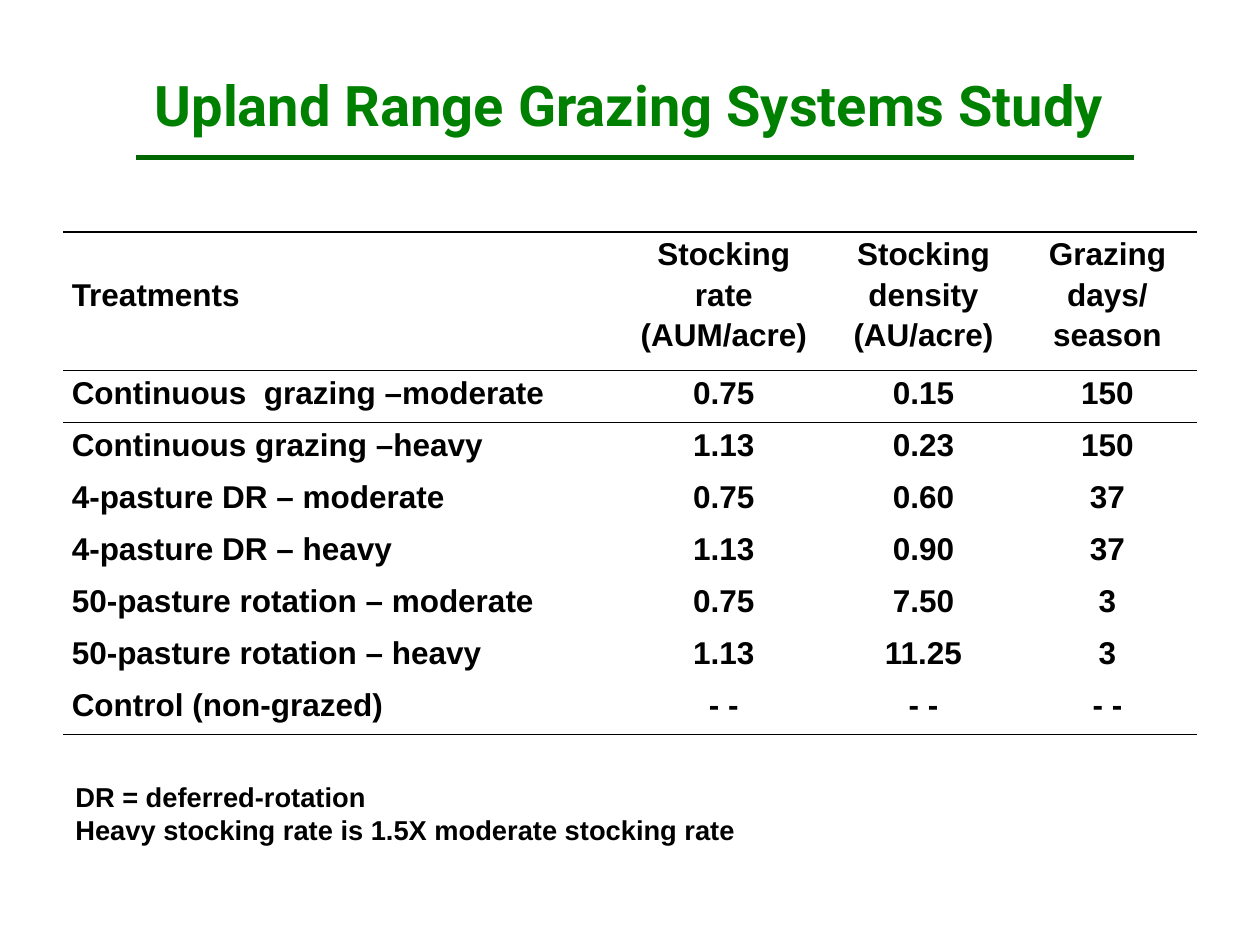
from lxml.etree import SubElement
from pptx import Presentation
from pptx.dml.color import RGBColor
from pptx.enum.shapes import MSO_CONNECTOR
from pptx.enum.text import MSO_ANCHOR, PP_ALIGN
from pptx.oxml.ns import qn
from pptx.util import Inches, Pt

BLACK = "000000"
NO_GRID_STYLE = "{2D5ABB26-0587-4C30-8999-92F81FD0307C}"
LINE_PITCH = 0.32  # height of one header line

COLUMN_WIDTHS = [4.41, 1.67, 1.5, 1.42]
SPACER_HEIGHT, HEADER_HEIGHT, BODY_HEIGHT = 0.3, 1.1, 2.89
ROWS = [
    ["Treatments", "Stocking rate (AUM/acre)", "Stocking density (AU/acre)",
     "Grazing days/ season"],
    ["Continuous  grazing –moderate", "0.75", "0.15", "150"],
    ["Continuous grazing –heavy", "1.13", "0.23", "150"],
    ["4-pasture DR – moderate", "0.75", "0.60", "37"],
    ["4-pasture DR – heavy", "1.13", "0.90", "37"],
    ["50-pasture rotation – moderate", "0.75", "7.50", "3"],
    ["50-pasture rotation – heavy", "1.13", "11.25", "3"],
    ["Control (non-grazed)", "- -", "- -", "- -"],
]


def color(value):
    return RGBColor.from_string(value)


def style_para(para, size, font_name, font_color, align=PP_ALIGN.LEFT):
    para.alignment = align
    font = para.font
    font.size, font.name, font.bold = Pt(size), font_name, True
    font.color.rgb = color(font_color)


def add_text(page, left, top, width, height, lines, size, font_name,
             font_color, align=PP_ALIGN.LEFT, anchor=MSO_ANCHOR.TOP):
    box = page.shapes.add_textbox(Inches(left), Inches(top),
                                  Inches(width), Inches(height))
    frame = box.text_frame
    frame.word_wrap = True
    frame.vertical_anchor = anchor
    frame.text = "\n".join(lines)
    for para in frame.paragraphs:
        style_para(para, size, font_name, font_color, align)


def add_rule(page, left, right, y, line_color, width):
    rule = page.shapes.add_connector(MSO_CONNECTOR.STRAIGHT, Inches(left),
                                     Inches(y), Inches(right), Inches(y))
    rule.line.color.rgb = color(line_color)
    rule.line.width = Pt(width)
    SubElement(rule._element.spPr, qn("a:effectLst"))


def add_border(cell, edge):
    properties = cell._tc.get_or_add_tcPr()
    line = SubElement(properties, qn(f"a:ln{edge}"), w=str(Pt(1)))
    fill = SubElement(line, qn("a:solidFill"))
    SubElement(fill, qn("a:srgbClr"), val=BLACK)


def fill_cell(cell, text, align, top_margin=0):
    cell.margin_left = cell.margin_right = Inches(0.07)
    cell.margin_top, cell.margin_bottom = Inches(top_margin), 0
    cell.text = text
    para = cell.text_frame.paragraphs[0]
    para.line_spacing = 1.15
    style_para(para, 18, "Arial", BLACK, align)


def add_treatment_table(page, left, top):
    body_count = len(ROWS) - 1
    heights = [SPACER_HEIGHT, HEADER_HEIGHT] + [BODY_HEIGHT / body_count] * body_count
    frame = page.shapes.add_table(
        len(heights), len(COLUMN_WIDTHS), Inches(left), Inches(top),
        Inches(sum(COLUMN_WIDTHS)), Inches(sum(heights)))
    table = frame.table
    table.first_row = table.horz_banding = False
    table._tbl.tblPr.find(qn("a:tableStyleId")).text = NO_GRID_STYLE
    for column, width in zip(table.columns, COLUMN_WIDTHS):
        column.width = Inches(width)
    for row, height in zip(table.rows, heights):
        row.height = Inches(height)

    # Empty spanning row above the header
    for cell in table.rows[0].cells:
        cell.margin_top = cell.margin_bottom = 0
        add_border(cell, "B")
        cell.fill.background()
    table.cell(0, 0).merge(table.cell(0, len(COLUMN_WIDTHS) - 1))

    # Header and treatments, ruled around the header and under the last row
    for r, texts in enumerate(ROWS):
        for c, text in enumerate(texts):
            cell = table.cell(r + 1, c)
            align = PP_ALIGN.CENTER if c else PP_ALIGN.LEFT
            fill_cell(cell, text, align, LINE_PITCH if r == c == 0 else 0)
            if r in (0, 1):
                add_border(cell, "T")
            if r in (0, body_count):
                add_border(cell, "B")
            cell.fill.background()


def main():
    deck = Presentation()
    deck.slide_width, deck.slide_height = Inches(10), Inches(7.5)
    page = deck.slides.add_slide(deck.slide_layouts[6])

    # Title and its underline
    add_text(page, 0.33, 0.51, 9.33, 0.64, ["Upland Range Grazing Systems Study"],
             32, "Roboto", "008000", PP_ALIGN.CENTER)
    add_rule(page, 1.08, 9, 1.25, "006600", 3)

    add_treatment_table(page, 0.5, 1.54)

    # Notes under the table
    add_text(page, 0.5, 6.08, 9, 0.75,
             ["DR = deferred-rotation",
              "Heavy stocking rate is 1.5X moderate stocking rate"],
             15.6, "Arial", BLACK, anchor=MSO_ANCHOR.MIDDLE)

    deck.save("out.pptx")


if __name__ == "__main__":
    main()
